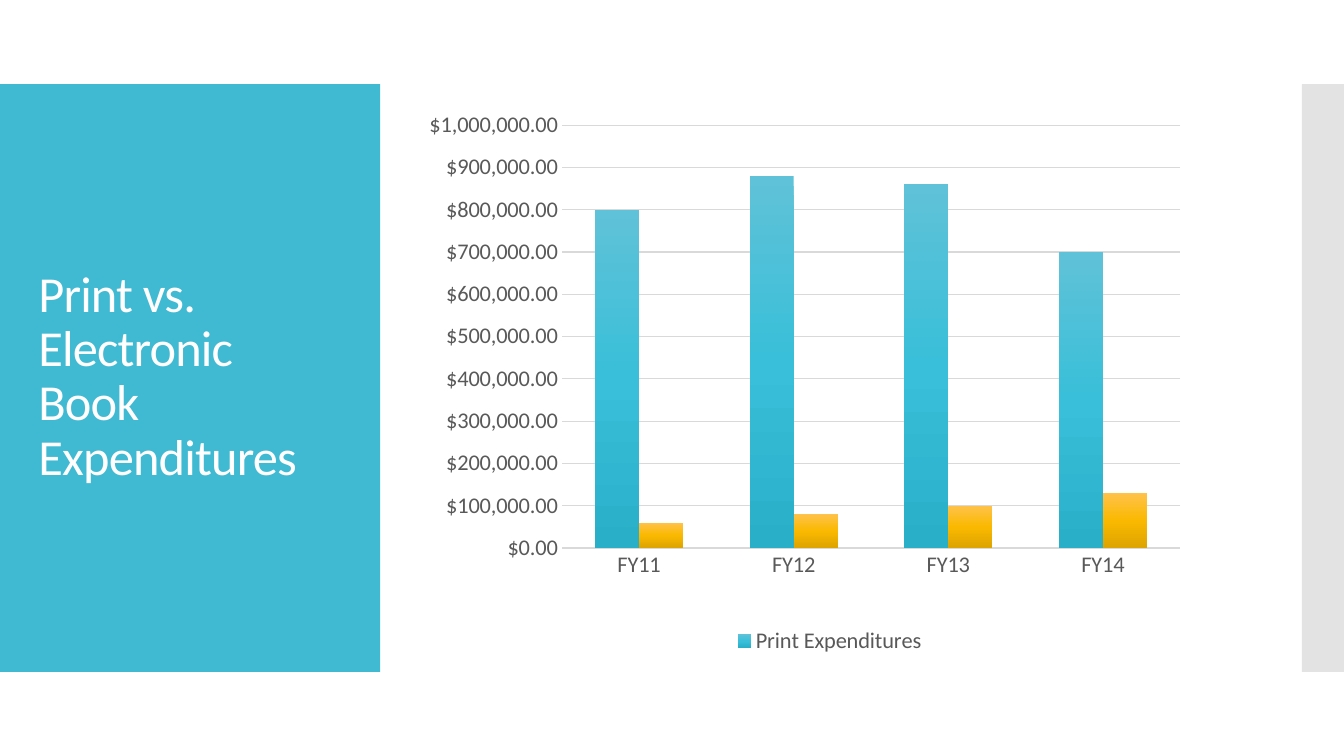
"""Build the slide comparing print and electronic book expenditures."""
import copy

import pptx
import pptx.chart.data
import pptx.dml.color
import pptx.enum.chart
import pptx.enum.shapes
import pptx.enum.text
import pptx.oxml
import pptx.oxml.ns
import pptx.util

Pt = pptx.util.Pt
RGBColor = pptx.dml.color.RGBColor
qn = pptx.oxml.ns.qn

FONT = "Calibri"
TEAL = RGBColor(0x40, 0xBA, 0xD2)
SILVER = RGBColor(0xC8, 0xC8, 0xC8)
WHITE = RGBColor(0xFF, 0xFF, 0xFF)
LABEL_GRAY = RGBColor(0x59, 0x59, 0x59)
GRID_GRAY = RGBColor(0xD9, 0xD9, 0xD9)
PRINT_SHADES = (RGBColor(0x5F, 0xC2, 0xD8), RGBColor(0x39, 0xBF, 0xD9), RGBColor(0x2A, 0xAF, 0xC9))
ELECTRONIC_SHADES = (RGBColor(0xFF, 0xC2, 0x4B), RGBColor(0xFA, 0xB9, 0x00), RGBColor(0xDE, 0xA4, 0x00))

HEADING = "Print vs. Electronic Book Expenditures"
YEARS = ["FY11", "FY12", "FY13", "FY14"]
EXPENDITURES = [
    ("Print Expenditures", [800000, 880000, 860000, 700000], PRINT_SHADES),
    ("Electronic Expenditures", [60000, 80000, 100000, 130000], ELECTRONIC_SHADES),
]

SLIDE_WIDTH, SLIDE_HEIGHT = 960, 540
BAND_TOP, BAND_HEIGHT = 60, 420
HEADING_BAND_WIDTH, EDGE_BAND_WIDTH = 271.5, 30
HEADING_BOX = (20.2, 88.5, 231.8, 362.2)
CHART_BOX = (304.5, 67.7, 576, 403.2)
PLOT_BOX = {"x": 0.168, "y": 0.054, "w": 0.767, "h": 0.749}


def add_band(slide, left, width, color):
    """Add a full-height colour band behind the heading."""
    band = slide.shapes.add_shape(
        pptx.enum.shapes.MSO_SHAPE.RECTANGLE, Pt(left), Pt(BAND_TOP), Pt(width), Pt(BAND_HEIGHT))
    band.shadow.inherit = False
    band.fill.solid()
    band.fill.fore_color.rgb = color
    band.line.fill.background()
    slide.shapes.title.element.addprevious(band.element)
    return band


def add_heading(slide):
    """Place and format the title."""
    heading = slide.shapes.title
    heading.left, heading.top, heading.width, heading.height = map(Pt, HEADING_BOX)
    frame = heading.text_frame
    frame.word_wrap = True
    frame.auto_size = pptx.enum.text.MSO_AUTO_SIZE.NONE
    frame.vertical_anchor = pptx.enum.text.MSO_ANCHOR.MIDDLE
    paragraph = frame.paragraphs[0]
    paragraph.alignment = pptx.enum.text.PP_ALIGN.LEFT
    paragraph.line_spacing = 0.9
    run = paragraph.add_run()
    run.text = HEADING
    run.font.name, run.font.size = FONT, Pt(36)
    run.font.color.rgb = WHITE
    run.font._element.set("spc", "-60")


def shade_bars(series, shades):
    """Fill the bars from top to bottom with evenly spaced shades."""
    fill = series.format.fill
    fill.gradient()
    fill.gradient_angle = 270
    first_stop = series._element.find(".//" + qn("a:gs"))
    first_stop.addnext(copy.deepcopy(first_stop))
    for index, (stop, shade) in enumerate(zip(fill.gradient_stops, shades)):
        stop.position = index / (len(shades) - 1)
        stop.color.rgb = shade


def place_plot(chart):
    """Fix the inner plot area as fractions of the chart."""
    plot_area = chart._chartSpace.find(".//" + qn("c:plotArea"))
    for layout in plot_area.findall(qn("c:layout")):
        plot_area.remove(layout)
    modes = '<c:xMode val="edge"/><c:yMode val="edge"/>'
    sizes = "".join(f'<c:{key} val="{value}"/>' for key, value in PLOT_BOX.items())
    plot_area.insert(0, pptx.oxml.parse_xml(
        f'<c:layout {pptx.oxml.ns.nsdecls("c")}><c:manualLayout>'
        f'<c:layoutTarget val="inner"/>{modes}{sizes}</c:manualLayout></c:layout>'))


def add_expenditure_chart(slide):
    """Add the clustered columns with axes and legend."""
    data = pptx.chart.data.CategoryChartData(number_format='"$"#,##0.00')
    data.categories = YEARS
    for name, amounts, _ in EXPENDITURES:
        data.add_series(name, amounts)
    chart = slide.shapes.add_chart(
        pptx.enum.chart.XL_CHART_TYPE.COLUMN_CLUSTERED, *map(Pt, CHART_BOX), data).chart
    chart.has_title = False
    chart.font.name, chart.font.size = FONT, Pt(16)
    chart.font.color.rgb = LABEL_GRAY

    columns = chart.plots[0]
    columns.gap_width, columns.overlap = 150, 0
    columns.vary_by_categories = False
    for series, (_, _, shades) in zip(columns.series, EXPENDITURES):
        shade_bars(series, shades)

    years, dollars = chart.category_axis, chart.value_axis
    for axis in (years, dollars):
        axis.major_tick_mark = axis.minor_tick_mark = pptx.enum.chart.XL_TICK_MARK.NONE
    years.format.line.color.rgb = GRID_GRAY
    years.format.line.width = Pt(1)
    dollars.format.line.fill.background()
    dollars.minimum_scale, dollars.maximum_scale, dollars.major_unit = 0, 1000000, 100000
    dollars.tick_labels.number_format = '"$"#,##0.00'
    dollars.tick_labels.number_format_is_linked = False
    dollars.major_gridlines.format.line.color.rgb = GRID_GRAY
    dollars.major_gridlines.format.line.width = Pt(0.75)

    chart.has_legend = True
    chart.legend.position = pptx.enum.chart.XL_LEGEND_POSITION.BOTTOM
    chart.legend.include_in_layout = False
    chart.legend._element.find(qn("c:legendPos")).addnext(pptx.oxml.parse_xml(
        f'<c:legendEntry {pptx.oxml.ns.nsdecls("c")}><c:idx val="1"/><c:delete val="1"/></c:legendEntry>'))
    place_plot(chart)


def main():
    """Assemble and save the slide."""
    deck = pptx.Presentation()
    deck.slide_width, deck.slide_height = Pt(SLIDE_WIDTH), Pt(SLIDE_HEIGHT)
    slide = deck.slides.add_slide(deck.slide_layouts[5])
    add_band(slide, 0, HEADING_BAND_WIDTH, TEAL)
    edge = add_band(slide, SLIDE_WIDTH - EDGE_BAND_WIDTH, EDGE_BAND_WIDTH, SILVER)
    edge_color = edge.element.spPr.find(qn("a:solidFill")).find(qn("a:srgbClr"))
    edge_color.append(pptx.oxml.parse_xml(f'<a:alpha {pptx.oxml.ns.nsdecls("a")} val="50000"/>'))
    add_heading(slide)
    add_expenditure_chart(slide)
    deck.save("out.pptx")


if __name__ == "__main__":
    main()
